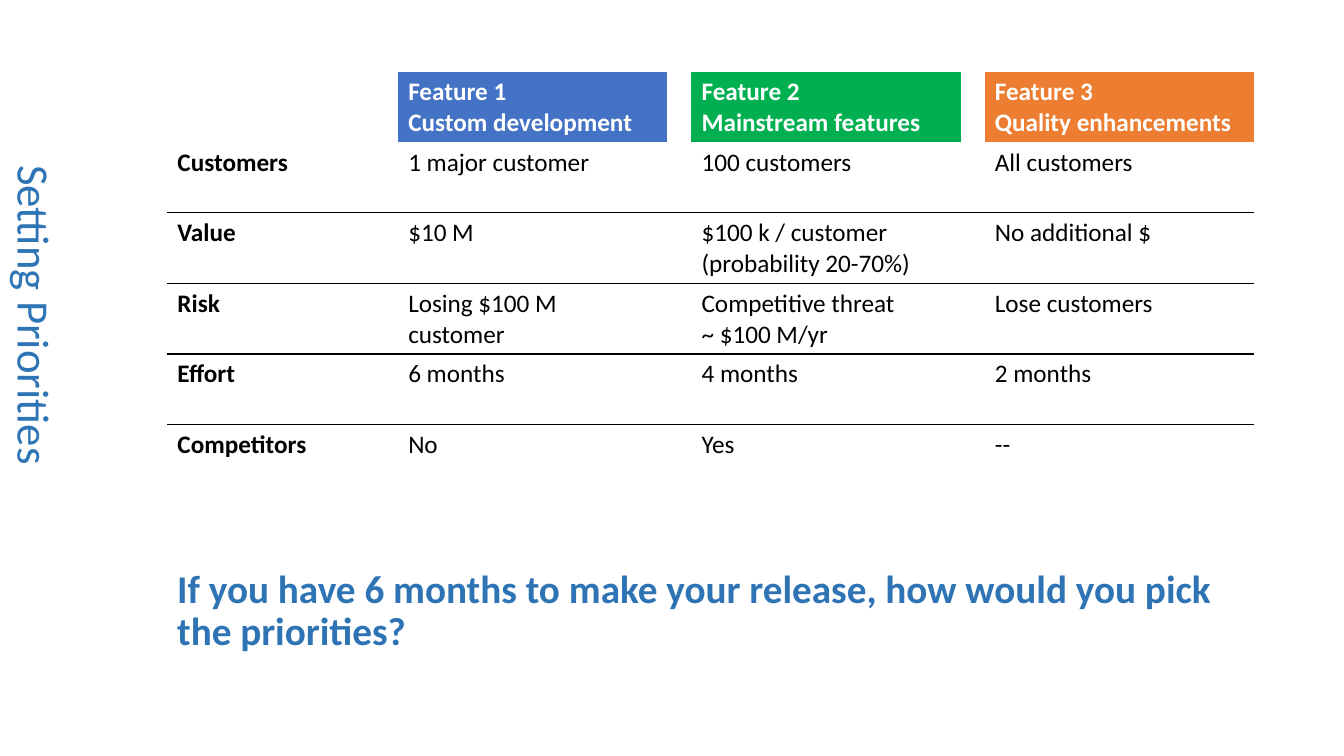
from dataclasses import dataclass
from typing import Optional

from lxml.etree import SubElement
from pptx import Presentation
from pptx.dml.color import RGBColor
from pptx.enum.text import MSO_ANCHOR as Anchor, PP_ALIGN as Align
from pptx.oxml.ns import qn
from pptx.util import Emu, Pt

EMU_PER_PX = 9144
FONT = "Calibri"
WHITE = "FFFFFF"
BLACK = "000000"
NO_GRID_STYLE = "{2D5ABB26-0587-4C30-8999-92F81FD0307C}"


@dataclass(frozen=True)
class Feature:
    heading: str
    color: str
    answers: tuple[str, ...]


CRITERIA = ("Customers", "Value", "Risk", "Effort", "Competitors")
FEATURES = (
    Feature("Feature 1\nCustom development", "4472C4",
            ("1 major customer", "$10 M", "Losing $100 M\ncustomer", "6 months", "No")),
    Feature("Feature 2\nMainstream features", "00B050",
            ("100 customers", "$100 k / customer\n(probability 20-70%)",
             "Competitive threat\n~ $100 M/yr", "4 months", "Yes")),
    Feature("Feature 3\nQuality enhancements", "ED7D31",
            ("All customers", "No additional $", "Lose customers", "2 months", "--")),
)
CRITERION_WIDTH, GAP_WIDTH, FEATURE_WIDTH, ROW_HEIGHT = 205, 23, 267, 70


def px(length: int) -> Emu:
    return Emu(length * EMU_PER_PX)


def rgb(color: str) -> RGBColor:
    return RGBColor.from_string(color)


def write(frame, text: str, *, size: int = 18, color: str = BLACK, bold: bool = False,
          align: Align = Align.LEFT, spacing: Optional[float] = None) -> None:
    for index, line in enumerate(text.split("\n")):
        paragraph = frame.add_paragraph() if index else frame.paragraphs[0]
        paragraph.alignment = align
        if spacing:
            paragraph.line_spacing = spacing
        run = paragraph.add_run()
        run.text = line
        run.font.name = FONT
        run.font.size = Pt(size)
        run.font.bold = bold
        run.font.color.rgb = rgb(color)


def add_frame(slide, left: int, top: int, width: int, height: int, anchor: Anchor,
              insets: tuple[int, int, int, int]):
    frame = slide.shapes.add_textbox(px(left), px(top), px(width), px(height)).text_frame
    frame.word_wrap = True
    frame.vertical_anchor = anchor
    (frame.margin_left, frame.margin_top,
     frame.margin_right, frame.margin_bottom) = map(px, insets)
    return frame


def rule_cell(cell, edge: str, ruled: bool) -> None:
    line = SubElement(cell._tc.get_or_add_tcPr(), qn(f"a:{edge}"), w=str(Pt(1)))
    if ruled:
        SubElement(SubElement(line, qn("a:solidFill")), qn("a:srgbClr"), val=BLACK)
    else:
        SubElement(line, qn("a:noFill"))


def fill_cell(cell, text: str, *, color: str = BLACK, bold: bool = False) -> None:
    cell.margin_left = cell.margin_right = px(10)
    cell.margin_top = cell.margin_bottom = px(5)
    write(cell.text_frame, text, color=color, bold=bold)


def add_comparison(slide, left: int, top: int) -> None:
    widths = [CRITERION_WIDTH] + [GAP_WIDTH, FEATURE_WIDTH] * len(FEATURES)
    row_count = len(CRITERIA) + 1
    table = slide.shapes.add_table(row_count, len(widths), px(left), px(top),
                                   px(sum(widths)), px(ROW_HEIGHT * row_count)).table
    table.first_row = table.horz_banding = False
    table._tbl.tblPr.find(qn("a:tableStyleId")).text = NO_GRID_STYLE
    for column, width in zip(table.columns, widths):
        column.width = px(width)
    for index, row in enumerate(table.rows):
        row.height = px(ROW_HEIGHT)
        for cell in row.cells:
            rule_cell(cell, "lnT", index > 1)
            rule_cell(cell, "lnB", 0 < index < row_count - 1)
            cell.fill.background()
    for index, criterion in enumerate(CRITERIA, 1):
        fill_cell(table.cell(index, 0), criterion, bold=True)
    for position, feature in enumerate(FEATURES):
        column = 2 + 2 * position
        heading = table.cell(0, column)
        heading.fill.solid()
        heading.fill.fore_color.rgb = rgb(feature.color)
        fill_cell(heading, feature.heading, color=WHITE, bold=True)
        for index, answer in enumerate(feature.answers, 1):
            fill_cell(table.cell(index, column), answer)


def main() -> None:
    deck = Presentation()
    deck.slide_width, deck.slide_height = px(1333), px(750)
    slide = deck.slides.add_slide(deck.slide_layouts[6])

    title = add_frame(slide, 0, 0, 92, 635, Anchor.BOTTOM, (8, 5, 10, 20))
    title._txBody.bodyPr.set("vert", "vert")
    write(title, "Setting Priorities", size=32, color="2E75B5",
          align=Align.CENTER, spacing=0.9)

    question = add_frame(slide, 166, 546, 1076, 122, Anchor.MIDDLE, (10, 5, 10, 5))
    write(question, "If you have 6 months to make your release, "
          "how would you pick the priorities?",
          size=28, color="2E74B5", bold=True, spacing=0.9)

    add_comparison(slide, 166, 71)
    deck.save("out.pptx")


if __name__ == "__main__":
    main()
